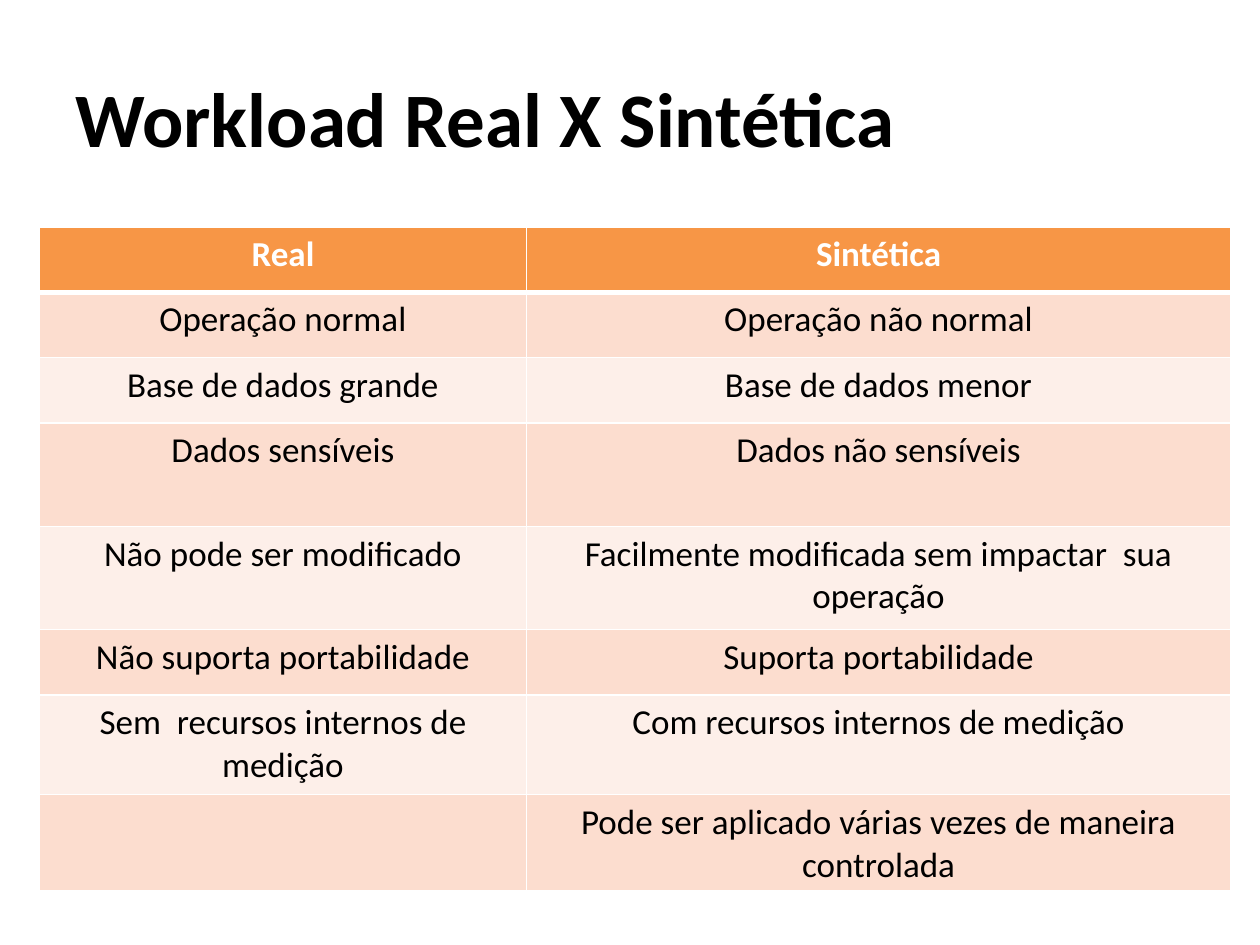
from pptx import Presentation
from pptx.dml.color import RGBColor
from pptx.enum.text import MSO_ANCHOR as Anchor, PP_ALIGN as Align
from pptx.oxml import parse_xml
from pptx.oxml.ns import nsdecls
from pptx.util import Pt


def color(value):
    return RGBColor.from_string(value)


def write(frame, text, size=20, ink="000000", bold=False, align=Align.CENTER):
    para = frame.paragraphs[0]
    para.alignment = align
    span = para.add_run()
    span.text = text
    span.font.name = "Calibri"
    span.font.size = Pt(size)
    span.font.bold = bold
    span.font.color.rgb = color(ink)


deck = Presentation()
deck.slide_width, deck.slide_height = Pt(720), Pt(540)
slide = deck.slides.add_slide(deck.slide_layouts[6])

# Title
box = slide.shapes.add_textbox(Pt(36), Pt(21.6), Pt(648), Pt(90))
box.text_frame.word_wrap = True
box.text_frame.vertical_anchor = Anchor.MIDDLE
write(box.text_frame, "Workload Real X Sintética", size=44, bold=True, align=Align.LEFT)

# Comparison table
rows = [
    ("Real", "Sintética", 37.4),
    ("Operação normal", "Operação não normal", 37.4),
    ("Base de dados grande", "Base de dados menor", 37.4),
    ("Dados sensíveis", "Dados não sensíveis", 59),
    ("Não pode ser modificado", "Facilmente modificada sem impactar  sua operação", 59),
    ("Não suporta portabilidade", "Suporta portabilidade", 37.4),
    ("Sem  recursos internos de medição", "Com recursos internos de medição", 56.9),
    ("", "Pode ser aplicado várias vezes de maneira controlada", 53.3),
]
widths = [278.4, 402.3]
height = sum(row[-1] for row in rows)
table = slide.shapes.add_table(
    len(rows), len(widths), Pt(22.5), Pt(129.6), Pt(sum(widths)), Pt(height)
).table
for column, width in zip(table.columns, widths):
    column.width = Pt(width)

for index, (*texts, row_height) in enumerate(rows):
    table.rows[index].height = Pt(row_height)
    header = index == 0
    fill = "F79646" if header else ("FDEFE9", "FCDDCF")[index % 2]
    for cell, text in zip(table.rows[index].cells, texts):
        # White borders, heavier around the line below the header
        for side in "LRTB":
            heavy = (side == "B" and header) or (side == "T" and index == 1)
            cell._tc.get_or_add_tcPr().append(parse_xml(
                f'<a:ln{side} {nsdecls("a")} w="{Pt(3 if heavy else 1)}"><a:solidFill>'
                f'<a:srgbClr val="FFFFFF"/></a:solidFill></a:ln{side}>'))
        cell.fill.solid()
        cell.fill.fore_color.rgb = color(fill)
        if text:
            write(cell.text_frame, text, ink="FFFFFF" if header else "000000", bold=header)

deck.save("out.pptx")
